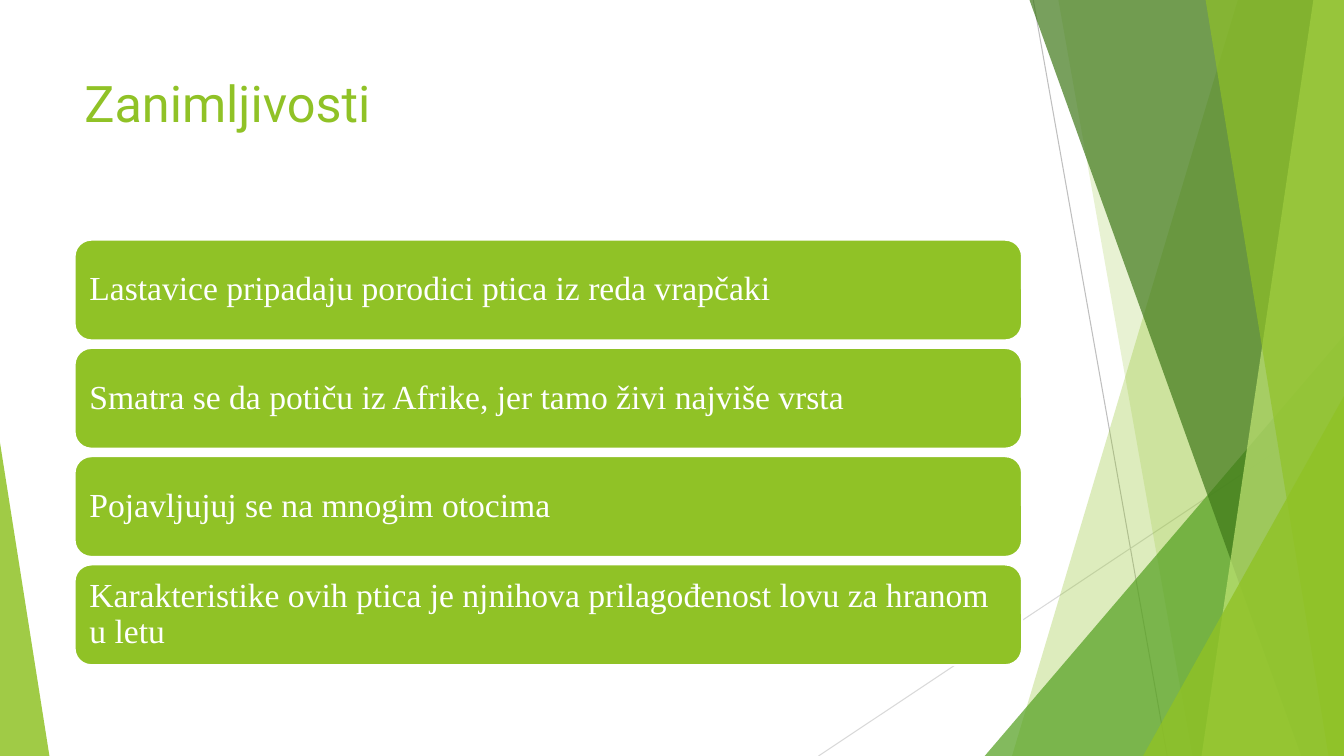
from dataclasses import dataclass

from lxml.etree import SubElement
from pptx import Presentation
from pptx.dml.color import RGBColor
from pptx.enum.shapes import MSO_CONNECTOR, MSO_SHAPE
from pptx.enum.text import MSO_ANCHOR, PP_ALIGN
from pptx.oxml.ns import qn
from pptx.util import Emu, Inches, Pt

GREEN = "90C226"
WHITE = "FFFFFF"

deck = Presentation()
deck.slide_width, deck.slide_height = Inches(13.33), Inches(7.5)
slide = deck.slides.add_slide(deck.slide_layouts[6])
shapes = slide.shapes


# Lengths are percent of the slide's width (x) and height (y).
@dataclass
class Line:
    x1: float
    y1: float
    x2: float
    y2: float
    color: str


@dataclass
class Band:
    """Runs from its slanted left edge to the right side of the slide."""
    top: float
    base: float
    color: str
    alpha: int


@dataclass
class Wedge:
    """Right triangle standing on the bottom edge, with its peak at a side."""
    left: float
    top: float
    width: float
    peak: float
    color: str
    alpha: int


LINES = [
    Line(76.88, 0, 86.85, 100, "BFBFBF"),
    Line(100, 53.73, 60.9, 100, "D9D9D9"),
]
FACETS = [
    Band(92.1, 75.3, GREEN, 30),
    Band(78.75, 88.72, GREEN, 20),
    Wedge(73.27, 44.4, 26.73, 1, "54A021", 72),
    Band(76.6, 96.82, "3F7819", 70),
    Band(97.72, 89.4, "C0E474", 70),
    Band(89.7, 98.85, GREEN, 65),
    Wedge(85.05, 52.4, 14.95, 1, GREEN, 80),
    Wedge(0, 58.53, 3.68, 0, GREEN, 85),
]
FACTS = [
    "Lastavice pripadaju porodici ptica iz reda vrapčaki",
    "Smatra se da potiču iz Afrike, jer tamo živi najviše vrsta",
    "Pojavljujuj se na mnogim otocima",
    "Karakteristike ovih ptica je njnihova prilagođenost lovu za hranom u letu",
]
LEFT, WIDTH = 5.55, 70.5
BAR_TOP, BAR_HIGH, BAR_STEP = 31.7, 13.33, 14.32


def px(share: float) -> Emu:
    return Emu(round(deck.slide_width * share / 100))


def py(share: float) -> Emu:
    return Emu(round(deck.slide_height * share / 100))


def rgb(code: str) -> RGBColor:
    return RGBColor.from_string(code)


def paint(shape, color: str, alpha: int = 100) -> None:
    shape.shadow.inherit = False
    shape.line.fill.background()
    shape.fill.solid()
    shape.fill.fore_color.rgb = rgb(color)
    if alpha < 100:
        tone = shape.fill._xPr.find(".//" + qn("a:srgbClr"))
        SubElement(tone, qn("a:alpha"), val=str(alpha * 1000))


def write(shape, text: str, font: str, size: int, color: str):
    shape.text_frame.word_wrap = True
    par = shape.text_frame.paragraphs[0]
    par.text = text
    par.alignment = PP_ALIGN.LEFT
    par.font.name, par.font.size = font, Pt(size)
    par.font.color.rgb = rgb(color)
    return par


def draw_line(line: Line) -> None:
    link = shapes.add_connector(MSO_CONNECTOR.STRAIGHT, px(line.x1),
                                py(line.y1), px(line.x2), py(line.y2))
    link.line.color.rgb = rgb(line.color)
    link.line.width = Pt(0.75)
    SubElement(link._element.spPr, qn("a:effectLst"))


def draw_band(band: Band) -> None:
    pen = shapes.build_freeform(px(band.top), py(0))
    pen.add_line_segments([(px(100), py(0)), (px(100), py(100)),
                           (px(band.base), py(100))])
    paint(pen.convert_to_shape(), band.color, band.alpha)


def draw_wedge(wedge: Wedge) -> None:
    shape = shapes.add_shape(MSO_SHAPE.ISOSCELES_TRIANGLE, px(wedge.left),
                             py(wedge.top), px(wedge.width),
                             py(100 - wedge.top))
    shape.adjustments[0] = wedge.peak
    paint(shape, wedge.color, wedge.alpha)


def draw_bar(row: int, text: str) -> None:
    bar = shapes.add_shape(MSO_SHAPE.ROUNDED_RECTANGLE, px(LEFT),
                           py(BAR_TOP + row * BAR_STEP), px(WIDTH),
                           py(BAR_HIGH))
    paint(bar, GREEN)
    bar.line.color.rgb = rgb(WHITE)
    bar.line.width = Pt(1.5)
    frame = bar.text_frame
    frame.vertical_anchor = MSO_ANCHOR.MIDDLE
    frame.margin_left = frame.margin_right = Inches(0.1)
    frame.margin_top = frame.margin_bottom = Inches(0.1)
    par = write(bar, text, "Times New Roman", 24, WHITE)
    par.line_spacing = 0.9


# Backdrop
for line in LINES:
    draw_line(line)
for facet in FACETS:
    if isinstance(facet, Band):
        draw_band(facet)
    else:
        draw_wedge(facet)

# Title
title = shapes.add_textbox(px(LEFT), py(8.93), px(WIDTH), py(19.2))
write(title, "Zanimljivosti", "Roboto", 36, GREEN)

# Facts
for row, fact in enumerate(FACTS):
    draw_bar(row, fact)

deck.save("out.pptx")
